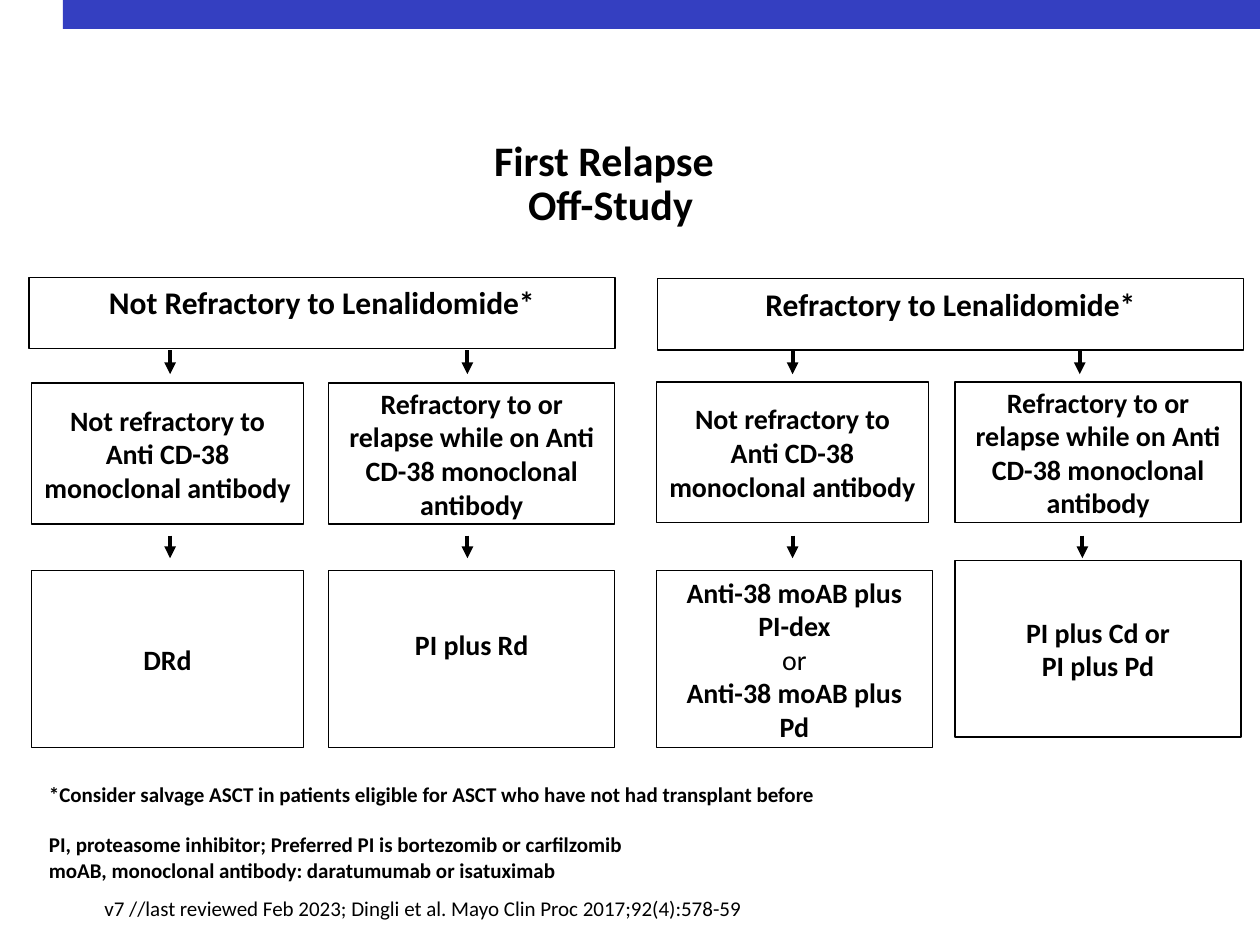
from lxml import etree
from pptx import Presentation
from pptx.dml.color import RGBColor
from pptx.enum.shapes import MSO_CONNECTOR, MSO_SHAPE
from pptx.enum.text import MSO_ANCHOR, PP_ALIGN
from pptx.oxml.ns import qn
from pptx.util import Pt

BLACK = RGBColor(0, 0, 0)
WHITE = RGBColor(255, 255, 255)
BLUE = RGBColor(0x34, 0x3F, 0xC1)
FONT = "Calibri"
TOP, MIDDLE = MSO_ANCHOR.TOP, MSO_ANCHOR.MIDDLE
LEFT, CENTER = PP_ALIGN.LEFT, PP_ALIGN.CENTER
RECTANGLE, STRAIGHT = MSO_SHAPE.RECTANGLE, MSO_CONNECTOR.STRAIGHT

TITLE = "First Relapse Off-Study"
NOT_REFRACTORY = "Not refractory to Anti CD-38 monoclonal antibody"
REFRACTORY = "Refractory to or relapse while on Anti CD-38 monoclonal antibody"

# Text, left, top
GROUPS = [
    ("Not Refractory to Lenalidomide*", 16.6, 158.4),
    ("Refractory to Lenalidomide*", 375.8, 159.1),
]
# Condition, left, top, width
CONDITIONS = [
    (NOT_REFRACTORY, 18, 218.9, 155.5),
    (REFRACTORY, 187.9, 218.9, 163.4),
    (NOT_REFRACTORY, 375.1, 218.2, 155.5),
    (REFRACTORY, 545.8, 218.2, 163.4),
]
# Treatment lines, left, top, width, bottom inset
TREATMENTS = [
    (["DRd"], 18, 326.2, 155.5, 3.6),
    (["PI plus Rd"], 187.9, 326.2, 163.4, 20.6),
    (["Anti-38 moAB plus PI-dex", "or", "Anti-38 moAB plus Pd"],
     375.1, 326.2, 157.7, 3.6),
    (["PI plus Cd or", "PI plus Pd"], 545.8, 320.4, 163.4, 3.6),
]
LIGHT_LINES = {"or"}
# Top, bottom, centre of each arrow in the row
ARROW_ROWS = [
    (200.2, 213.8, (97.2, 267.1, 452.9, 617)),
    (306, 319, (97.2, 267.1, 452.9, 618.5)),
]
FOOTNOTES = [
    "*Consider salvage ASCT in patients eligible for ASCT who have not had transplant before",
    "PI, proteasome inhibitor; Preferred PI is bortezomib or carfilzomib",
    "moAB, monoclonal antibody: daratumumab or isatuximab",
]
VERSION = "v7 //last reviewed Feb 2023; Dingli et al. Mayo Clin Proc 2017;92(4):578-59"


def write(frame, lines, size, bold=True, align=CENTER, anchor=TOP):
    frame.word_wrap = True
    frame.vertical_anchor = anchor
    for i, line in enumerate(lines):
        paragraph = frame.add_paragraph() if i else frame.paragraphs[0]
        paragraph.text = line
        paragraph.alignment = align
        font = paragraph.font
        font.name, font.size = FONT, Pt(size)
        font.bold = bold and line not in LIGHT_LINES
        font.color.rgb = BLACK
    return frame.paragraphs


def add_box(slide, lines, left, top, width, height, size, anchor=MIDDLE, bottom_inset=3.6):
    box = slide.shapes.add_shape(RECTANGLE, Pt(left), Pt(top), Pt(width), Pt(height))
    box.shadow.inherit = False
    box.fill.solid()
    box.fill.fore_color.rgb = WHITE
    box.line.color.rgb = BLACK
    box.line.width = Pt(0.75)
    box.text_frame.margin_bottom = Pt(bottom_inset)
    write(box.text_frame, lines, size, anchor=anchor)


def add_arrow(slide, x, top, bottom):
    arrow = slide.shapes.add_connector(STRAIGHT, Pt(x), Pt(top), Pt(x), Pt(bottom))
    arrow.line.color.rgb = BLACK
    arrow.line.width = Pt(2.25)
    properties = arrow.line._get_or_add_ln()
    etree.SubElement(properties, qn("a:tailEnd"), type="triangle")
    etree.SubElement(arrow._element.spPr, qn("a:effectLst"))


def add_text(slide, lines, left, top, width, height, size, insets=None, **style):
    frame = slide.shapes.add_textbox(Pt(left), Pt(top), Pt(width), Pt(height)).text_frame
    if insets:
        (frame.margin_left, frame.margin_top,
         frame.margin_right, frame.margin_bottom) = map(Pt, insets)
    return write(frame, lines, size, align=LEFT, **style)


def main():
    deck = Presentation()
    deck.slide_width, deck.slide_height = Pt(720), Pt(540)
    slide = deck.slides.add_slide(deck.slide_layouts[6])

    band = slide.shapes.add_shape(RECTANGLE, Pt(36), Pt(0), Pt(684), Pt(16.6))
    band.shadow.inherit = False
    band.fill.solid()
    band.fill.fore_color.rgb = BLUE
    band.line.fill.background()

    title = add_text(slide, [TITLE], 281.5, 75.6, 157.7, 56.9, 24, (0, 4.3, 0, 0))[0]
    title.line_spacing = Pt(25.5)
    indents = title._p.get_or_add_pPr()
    indents.set("marL", str(Pt(20.2)))
    indents.set("indent", str(Pt(-19.4)))

    for text, left, top in GROUPS:
        add_box(slide, [text], left, top, 334.8, 41, 18, anchor=TOP)
    for text, left, top, width in CONDITIONS:
        add_box(slide, [text], left, top, width, 80.6, 16)
    for lines, left, top, width, bottom_inset in TREATMENTS:
        add_box(slide, lines, left, top, width, 100.8, 16, bottom_inset=bottom_inset)
    for top, bottom, centres in ARROW_ROWS:
        for x in centres:
            add_arrow(slide, x, top, bottom)

    footnotes = add_text(slide, FOOTNOTES, 20.9, 442.8, 592.6, 65.5, 12)
    footnotes[1].space_before = Pt(14.6)

    version = add_text(slide, [VERSION], 59, 514.1, 372.2, 12.2, 12, (0, 0, 0, 0), bold=False)[0]
    version.line_spacing = Pt(12.3)
    version._p.get_or_add_pPr().set("marL", str(Pt(0.72)))

    deck.save("out.pptx")


if __name__ == "__main__":
    main()
